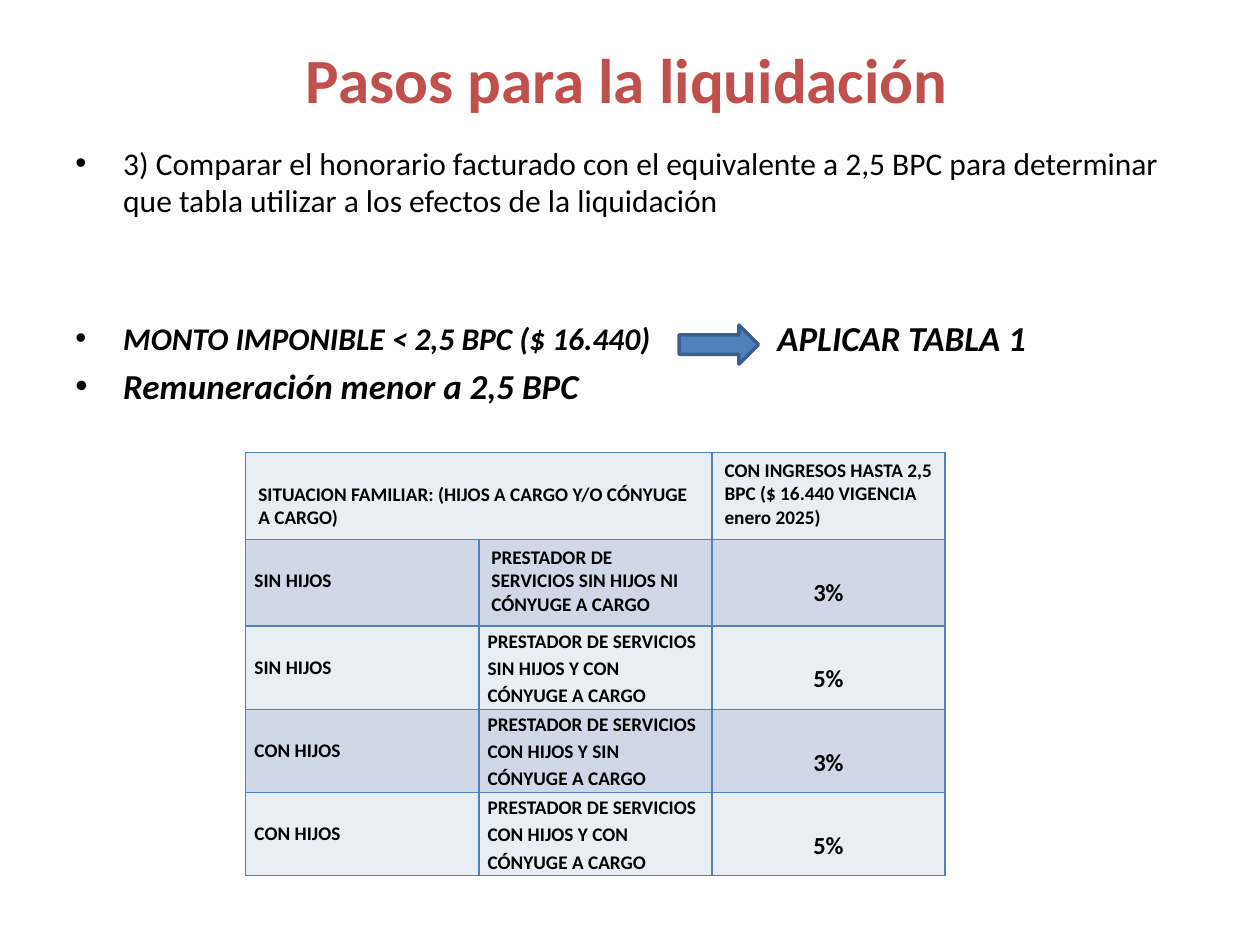
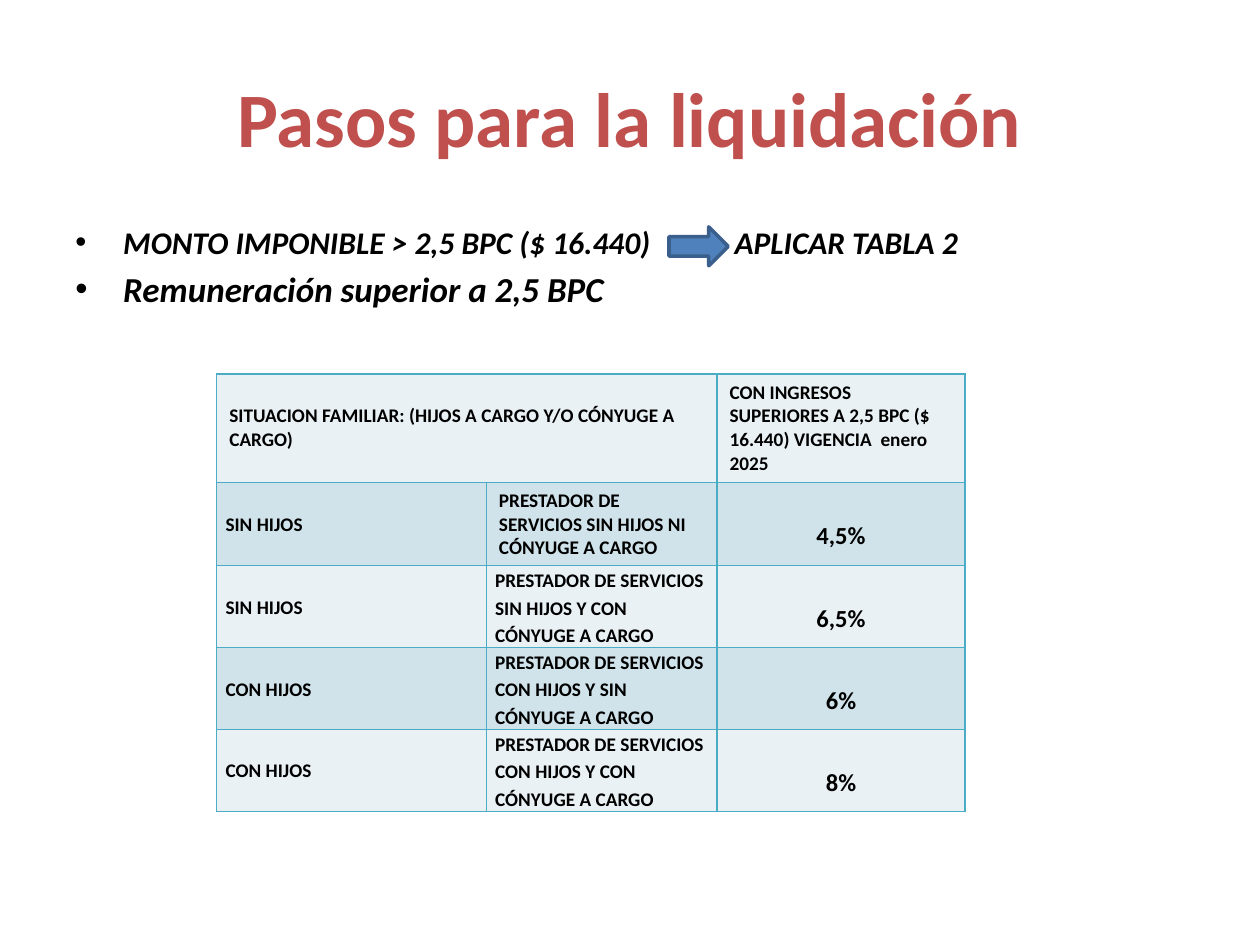
from pptx import Presentation
from pptx.dml.color import RGBColor
from pptx.enum.shapes import MSO_SHAPE
from pptx.enum.text import MSO_ANCHOR, PP_ALIGN
from pptx.oxml import parse_xml
from pptx.oxml.ns import nsdecls
from pptx.util import Inches, Pt

RIGHT_ARROW = MSO_SHAPE.RIGHT_ARROW
TOP, MIDDLE = MSO_ANCHOR.TOP, MSO_ANCHOR.MIDDLE
LEFT, CENTER = PP_ALIGN.LEFT, PP_ALIGN.CENTER

# The grid has 10 columns and 7.5 rows of equal size.
COLUMNS, ROWS = 10, 7.5
CELL = Inches(1)
FONT = "Calibri"
COLORS = {
    "text": "000000",
    "title": "C0504D",
    "arrow": "4F81BD",
    "arrow_line": "3A5F8C",
}
BLUE_TABLE = {"border": "4F81BD", "light": "E9EDF4", "dark": "D0D8E8"}
TEAL_TABLE = {"border": "4BACC6", "light": "E9F1F5", "dark": "D0E3EA"}

MARGIN = 0.5
BODY_WIDTH = COLUMNS - 2 * MARGIN
BULLET_INDENT = 0.38
TITLE = "Pasos para la liquidación"
FAMILY_HEADER = "SITUACION FAMILIAR: (HIJOS A CARGO Y/O CÓNYUGE A CARGO)"
FAMILIES = [
    ("SIN HIJOS", "PRESTADOR DE SERVICIOS SIN HIJOS NI CÓNYUGE A CARGO"),
    ("SIN HIJOS", "PRESTADOR DE SERVICIOS SIN HIJOS Y CON CÓNYUGE A CARGO"),
    ("CON HIJOS", "PRESTADOR DE SERVICIOS CON HIJOS Y SIN CÓNYUGE A CARGO"),
    ("CON HIJOS", "PRESTADOR DE SERVICIOS CON HIJOS Y CON CÓNYUGE A CARGO"),
]

# Cell margins: left and right, top, bottom
WIDE_MARGINS = (0.1, 0.05, 0.05)
HEADER_MARGINS = (0.1, 0.24, 0.05)
NARROW_MARGINS = (0.07, 0, 0)
FAMILY_MARGINS = (0.07, 0.21, 0)
RATE_MARGINS = (0.07, 0.27, 0)


def grid(*cells):
    """Turn numbers of grid cells into lengths."""
    return [int(CELL * count) for count in cells]


def rgb(color):
    return RGBColor.from_string(color)


def add_run(paragraph, text, size, color=COLORS["text"], bold=True, italic=False):
    run = paragraph.add_run()
    run.text = text
    run.font.name = FONT
    run.font.size = Pt(size)
    run.font.bold = bold
    run.font.italic = italic
    run.font.color.rgb = rgb(color)


def add_text_frame(slide, left, top, width, height, anchor=TOP):
    text_box = slide.shapes.add_textbox(*grid(left, top, width, height))
    frame = text_box.text_frame
    frame.word_wrap = True
    frame.vertical_anchor = anchor
    return frame


def add_title(slide, top, width, height, size):
    frame = add_text_frame(slide, MARGIN, top, width, height, MIDDLE)
    paragraph = frame.paragraphs[0]
    paragraph.alignment = CENTER
    add_run(paragraph, TITLE, size, COLORS["title"])


def add_bullets(slide, top, height, bullets):
    """Each bullet is (text, size, emphasis, points of space before)."""
    frame = add_text_frame(slide, MARGIN, top, BODY_WIDTH, height)
    for index, (text, size, emphasis, space) in enumerate(bullets):
        paragraph = frame.add_paragraph() if index else frame.paragraphs[0]
        paragraph.space_before = Pt(space)
        indent, = grid(BULLET_INDENT)
        properties = paragraph._p.get_or_add_pPr()
        properties.set("marL", str(indent))
        properties.set("indent", str(-indent))
        for tag in ('buFont %s typeface="Arial"', 'buChar %s char="•"'):
            properties.append(parse_xml(f"<a:{tag % nsdecls('a')}/>"))
        add_run(paragraph, text, size, bold=emphasis, italic=emphasis)


def add_table_to_apply(slide, left, middle, text, size):
    height = 0.5
    frame = add_text_frame(slide, left, middle - height / 2, 3, height, MIDDLE)
    frame.margin_left = 0
    add_run(frame.paragraphs[0], text, size, italic=True)


def add_arrow(slide, left, top, width):
    arrow = slide.shapes.add_shape(RIGHT_ARROW, *grid(left, top, width, 0.31))
    arrow.shadow.inherit = False
    arrow.fill.solid()
    arrow.fill.fore_color.rgb = rgb(COLORS["arrow"])
    arrow.line.color.rgb = rgb(COLORS["arrow_line"])
    arrow.line.width = Pt(2)


def style_cell(cell, fill, border):
    cell.fill.solid()
    cell.fill.fore_color.rgb = rgb(fill)
    properties = cell._tc.get_or_add_tcPr()
    for position, side in enumerate("LRTB"):
        properties.insert(position, parse_xml(
            f'<a:ln{side} {nsdecls("a")} w="{Pt(1)}"><a:solidFill>'
            f'<a:srgbClr val="{border}"/></a:solidFill></a:ln{side}>'))


def write_cell(cell, text, margins, size=11, spacing=1.0, alignment=LEFT):
    side, top, bottom = grid(*margins)
    cell.margin_left = cell.margin_right = side
    cell.margin_top, cell.margin_bottom = top, bottom
    paragraph = cell.text_frame.paragraphs[0]
    paragraph.alignment = alignment
    paragraph.line_spacing = spacing
    add_run(paragraph, text, size)


def add_rate_table(slide, left, top, widths, heights, income_header, rates, colors):
    frame = slide.shapes.add_table(
        len(heights), len(widths), *grid(left, top, sum(widths), sum(heights)))
    table = frame.table
    table.first_row = table.horz_banding = False
    for column, width in zip(table.columns, grid(*widths)):
        column.width = width
    for index, (row, height) in enumerate(zip(table.rows, grid(*heights))):
        row.height = height
        for cell in row.cells:
            style_cell(cell, colors["dark" if index % 2 else "light"], colors["border"])

    table.cell(0, 0).merge(table.cell(0, 1))
    write_cell(table.cell(0, 0), FAMILY_HEADER, HEADER_MARGINS)
    write_cell(table.cell(0, 2), income_header, WIDE_MARGINS)
    for row, ((family, provider), rate) in enumerate(zip(FAMILIES, rates), start=1):
        write_cell(table.cell(row, 0), family, FAMILY_MARGINS, spacing=1.15)
        if row == 1:
            write_cell(table.cell(row, 1), provider, WIDE_MARGINS)
        else:
            write_cell(table.cell(row, 1), provider, NARROW_MARGINS, spacing=1.15)
        write_cell(table.cell(row, 2), rate, RATE_MARGINS, 14, 1.15, CENTER)


def build_lower_income(slide):
    add_title(slide, 0.23, 8.95, 0.78, 36)
    add_bullets(slide, 1.09, 2.4, [
        ("3) Comparar el honorario facturado con el equivalente a 2,5 BPC para "
         "determinar que tabla utilizar a los efectos de la liquidación", 18, False, 0),
        ("MONTO IMPONIBLE < 2,5 BPC ($ 16.440)", 18, True, 57),
        ("Remuneración menor a 2,5 BPC", 20, True, 4.5),
    ])
    add_table_to_apply(slide, 6.17, 2.68, "APLICAR TABLA 1", 20)
    add_rate_table(
        slide, 1.95, 3.59, [1.85] * 3, [0.69] * 2 + [0.66] * 3,
        "CON INGRESOS HASTA 2,5 BPC ($ 16.440 VIGENCIA enero 2025)",
        ["3%", "5%", "3%", "5%"], BLUE_TABLE)
    add_arrow(slide, 5.39, 2.58, 0.63)


def build_higher_income(slide):
    add_title(slide, 0.3, BODY_WIDTH, 1.25, 44)
    add_bullets(slide, 1.72, 1, [
        ("MONTO IMPONIBLE > 2,5 BPC ($ 16.440)", 18, True, 0),
        ("Remuneración superior a 2,5 BPC", 20, True, 4),
    ])
    add_table_to_apply(slide, 5.83, 1.92, "APLICAR TABLA 2", 18)
    add_arrow(slide, 5.31, 1.8, 0.47)
    add_rate_table(
        slide, 1.72, 2.97, [2.14, 1.83, 1.97], [0.86, 0.66] + [0.65] * 3,
        "CON INGRESOS SUPERIORES A 2,5 BPC ($ 16.440) VIGENCIA  enero 2025",
        ["4,5%", "6,5%", "6%", "8%"], TEAL_TABLE)


def main():
    presentation = Presentation()
    presentation.slide_width, presentation.slide_height = grid(COLUMNS, ROWS)
    blank_layout = presentation.slide_layouts[6]
    for build in (build_lower_income, build_higher_income):
        build(presentation.slides.add_slide(blank_layout))
    presentation.save("out.pptx")


if __name__ == "__main__":
    main()
